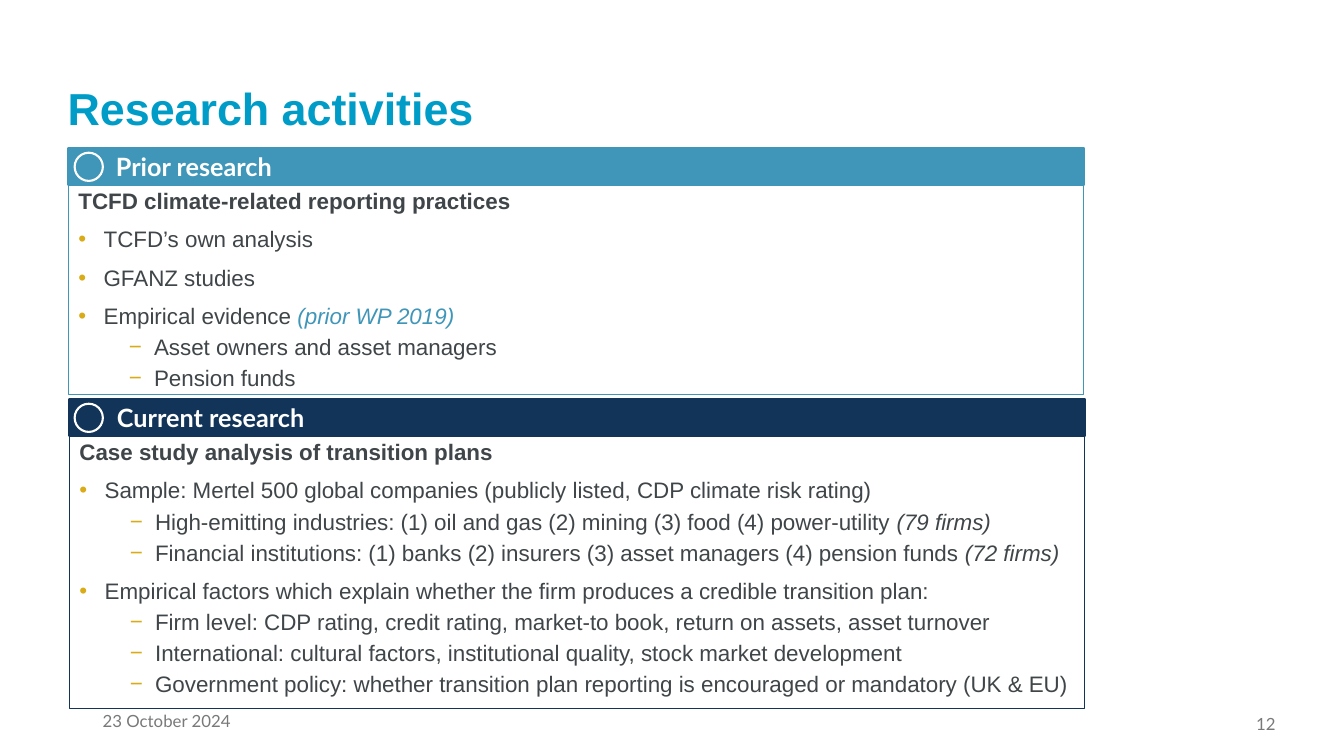
from dataclasses import dataclass
from lxml.etree import SubElement
from pptx import Presentation
from pptx.dml.color import RGBColor
from pptx.enum.shapes import MSO_SHAPE
from pptx.enum.text import MSO_ANCHOR, PP_ALIGN
from pptx.oxml.ns import qn
from pptx.util import Inches, Pt


@dataclass(frozen=True)
class Theme:
    title: str = "009CC8"
    prior: str = "4096B8"
    current: str = "113458"
    body: str = "3F4548"
    bullet: str = "D9AB16"
    white: str = "FFFFFF"
    footer: str = "797979"
    body_font: str = "Arial"
    label_font: str = "Lato"
    title_size: int = 32
    header_size: int = 18
    body_size: int = 16
    footer_size: int = 12


THEME = Theme()
PANEL_WIDTH = 10.07
HEADER_HEIGHT = 0.37
RING_SIZE = 0.28

# Bullet levels: character, left indent, space before
LEVELS = {0: (None, 0, 10), 1: ("•", 0.25, 10), 2: ("−", 0.75, 5)}

# Each line: level, then runs of (text, style)
PRIOR_LINES = [
    (0, [("TCFD climate-related reporting practices", "bold")]),
    (1, [("TCFD’s own analysis", "")]),
    (1, [("GFANZ studies", "")]),
    (1, [("Empirical evidence ", ""), ("(prior WP 2019)", "accent")]),
    (2, [("Asset owners and asset managers", "")]),
    (2, [("Pension funds", "")]),
]
CURRENT_LINES = [
    (0, [("Case study analysis of transition plans", "bold")]),
    (1, [("Sample: Mertel 500 global companies (publicly listed, CDP climate risk rating)", "")]),
    (2, [("High-emitting industries: (1) oil and gas (2) mining (3) food (4) power-utility ", ""),
         ("(79 firms)", "italic")]),
    (2, [("Financial institutions: (1) banks (2) insurers (3) asset managers (4) pension funds ", ""),
         ("(72 firms)", "italic")]),
    (1, [("Empirical factors which explain whether the firm produces a credible transition plan:", "")]),
    (2, [("Firm level: CDP rating, credit rating, market-to book, return on assets, asset turnover", "")]),
    (2, [("International: cultural factors, institutional quality, stock market development", "")]),
    (2, [("Government policy: whether transition plan reporting is encouraged or mandatory (UK & EU)", "")]),
]


def add_run(paragraph, text, font, size, color, bold=False, italic=False):
    run = paragraph.add_run()
    run.text = text
    run.font.name = font
    run.font.size = Pt(size)
    run.font.color.rgb = RGBColor.from_string(color)
    run.font.bold = bold
    run.font.italic = italic


def set_bullet(paragraph, character, indent):
    properties = paragraph._p.get_or_add_pPr()
    properties.set("marL", str(Inches(indent)))
    properties.set("indent", str(Inches(-0.25)))
    color = SubElement(properties, qn("a:buClr"))
    SubElement(color, qn("a:srgbClr")).set("val", THEME.bullet)
    SubElement(properties, qn("a:buFont")).set("typeface", THEME.body_font)
    SubElement(properties, qn("a:buChar")).set("char", character)


def add_box(slide, kind, left, top, width, height, line, line_width, fill=None):
    shape = slide.shapes.add_shape(kind, Inches(left), Inches(top), Inches(width), Inches(height))
    shape.shadow.inherit = False
    if fill:
        shape.fill.solid()
        shape.fill.fore_color.rgb = RGBColor.from_string(fill)
    else:
        shape.fill.background()
    shape.line.color.rgb = RGBColor.from_string(line)
    shape.line.width = Pt(line_width)
    return shape


def add_body(slide, left, top, height, color, lines):
    box = add_box(slide, MSO_SHAPE.RECTANGLE, left, top, PANEL_WIDTH, height, color, 0.75)
    frame = box.text_frame
    frame.word_wrap = True
    frame.vertical_anchor = MSO_ANCHOR.TOP
    for index, (level, runs) in enumerate(lines):
        paragraph = frame.add_paragraph() if index else frame.paragraphs[0]
        character, indent, space = LEVELS[level]
        paragraph.alignment = PP_ALIGN.LEFT
        paragraph.level = max(level - 1, 0)
        paragraph.line_spacing = 0.9
        paragraph.space_before = Pt(space if index else 0)
        if character:
            set_bullet(paragraph, character, indent)
        for text, style in runs:
            add_run(paragraph, text, THEME.body_font, THEME.body_size,
                    color if style == "accent" else THEME.body,
                    bold=style == "bold", italic=style in ("italic", "accent"))


def add_header(slide, left, top, color, label):
    bar = add_box(slide, MSO_SHAPE.RECTANGLE, left, top, PANEL_WIDTH, HEADER_HEIGHT,
                  color, 1.5, fill=color)
    frame = bar.text_frame
    frame.margin_left = Inches(0.47)
    frame.vertical_anchor = MSO_ANCHOR.MIDDLE
    frame.paragraphs[0].alignment = PP_ALIGN.LEFT
    add_run(frame.paragraphs[0], label, THEME.label_font, THEME.header_size, THEME.white, bold=True)
    ring_top = top + (HEADER_HEIGHT - RING_SIZE) / 2
    add_box(slide, MSO_SHAPE.OVAL, 0.74, ring_top, RING_SIZE, RING_SIZE, THEME.white, 1.5)


def add_panel(slide, left, top, body_height, color, label, lines):
    add_body(slide, left, top + HEADER_HEIGHT, body_height, color, lines)
    add_header(slide, left, top, color, label)


def add_footer(slide, left, top, width, height, text, alignment):
    box = slide.shapes.add_textbox(Inches(left), Inches(top), Inches(width), Inches(height))
    frame = box.text_frame
    frame.word_wrap = True
    frame.vertical_anchor = MSO_ANCHOR.MIDDLE
    frame.paragraphs[0].alignment = alignment
    add_run(frame.paragraphs[0], text, THEME.label_font, THEME.footer_size, THEME.footer)


def set_title(slide, text):
    title = slide.shapes.title
    title.left, title.top = Inches(0.57), Inches(0.44)
    title.width, title.height = Inches(12.09), Inches(1.25)
    frame = title.text_frame
    frame.vertical_anchor = MSO_ANCHOR.MIDDLE
    frame.paragraphs[0].alignment = PP_ALIGN.LEFT
    add_run(frame.paragraphs[0], text, THEME.body_font, THEME.title_size, THEME.title, bold=True)


def main():
    presentation = Presentation()
    presentation.slide_width = Inches(13.33)
    presentation.slide_height = Inches(7.5)
    slide = presentation.slides.add_slide(presentation.slide_layouts[5])

    # Title
    set_title(slide, "Research activities")

    # Research panels
    add_panel(slide, 0.68, 1.47, 2.07, THEME.prior, "Prior research", PRIOR_LINES)
    add_panel(slide, 0.69, 3.96, 2.7, THEME.current, "Current research", CURRENT_LINES)

    # Date and page number
    add_footer(slide, 0.92, 6.95, 3, 0.4, "23 October 2024", PP_ALIGN.LEFT)
    add_footer(slide, 11.81, 7, 0.94, 0.37, "12", PP_ALIGN.RIGHT)

    presentation.save("out.pptx")


if __name__ == "__main__":
    main()
